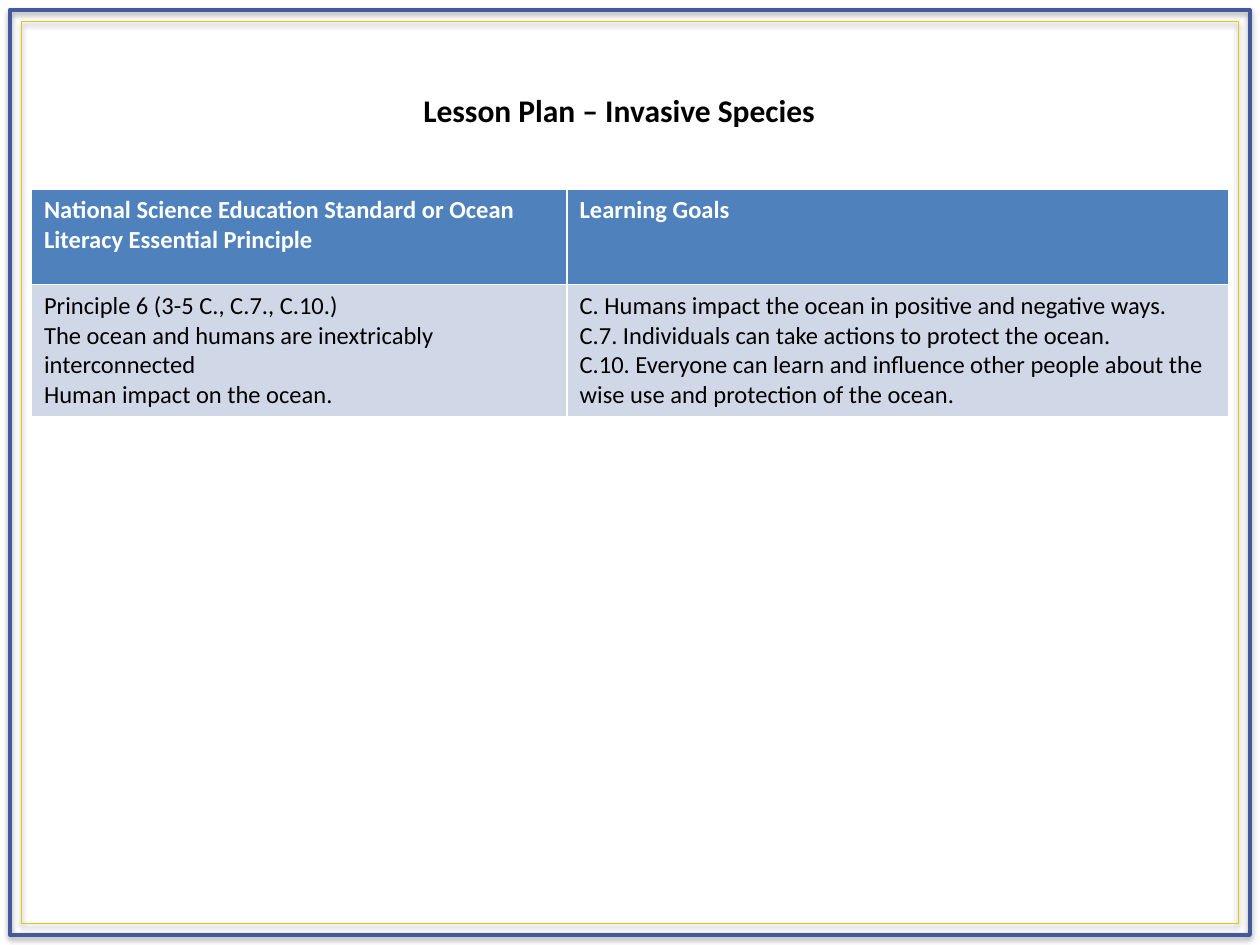
import pptx
import pptx.dml.color
import pptx.enum.shapes
import pptx.enum.text
import pptx.oxml
import pptx.oxml.ns
import pptx.util
from pptx.util import Inches


def color(hex_text):
    return pptx.dml.color.RGBColor.from_string(hex_text)


def set_font(para, size, hex_text, bold):
    para.font.name = "Calibri"
    para.font.size = pptx.util.Pt(size)
    para.font.bold = bold
    para.font.color.rgb = color(hex_text)


SHADOW = (
    f'<a:effectLst {pptx.oxml.ns.nsdecls("a")}>'
    '<a:outerShdw blurRad="40000" dist="23000" dir="5400000" rotWithShape="0">'
    '<a:srgbClr val="000000"><a:alpha val="35000"/></a:srgbClr>'
    '</a:outerShdw></a:effectLst>'
)

deck = pptx.Presentation()
deck.slide_width = Inches(10)
deck.slide_height = Inches(7.5)
page = deck.slides.add_slide(deck.slide_layouts[6])

# Standards table; the default table style supplies the white cell borders
rows = [
    (["National Science Education Standard or Ocean Literacy Essential Principle"],
     ["Learning Goals"]),
    (["Principle 6 (3-5 C., C.7., C.10.)",
      "The ocean and humans are inextricably interconnected",
      "Human impact on the ocean."],
     ["C. Humans impact the ocean in positive and negative ways.",
      "C.7. Individuals can take actions to protect the ocean.",
      "C.10. Everyone can learn and influence other people about the "
      "wise use and protection of the ocean."]),
]
row_styles = [("4F81BD", "FFFFFF", True), ("D0D8E8", "000000", False)]
table = page.shapes.add_table(
    2, 2, Inches(0.25), Inches(1.5), Inches(9.5), Inches(1.52)).table
for column, width in zip(table.columns, (4.25, 5.25)):
    column.width = Inches(width)
for row, texts, (fill, text_color, bold) in zip(table.rows, rows, row_styles):
    row.height = Inches(0.76)
    for cell, lines in zip(row.cells, texts):
        cell.fill.solid()
        cell.fill.fore_color.rgb = color(fill)
        cell.text_frame.text = "\n".join(lines)
        for para in cell.text_frame.paragraphs:
            set_font(para, 14, text_color, bold)

# Double page border: inner yellow, outer blue
for margin, line_color, line_width in [(0.17, "E5C50E", 1), (0.08, "43599B", 2.5)]:
    frame = page.shapes.add_shape(
        pptx.enum.shapes.MSO_SHAPE.RECTANGLE, Inches(margin), Inches(margin),
        Inches(10 - 2 * margin), Inches(7.5 - 2 * margin))
    frame.fill.background()
    frame.line.color.rgb = color(line_color)
    frame.line.width = pptx.util.Pt(line_width)
    frame.element.spPr.append(pptx.oxml.parse_xml(SHADOW))

title = page.shapes.add_textbox(Inches(1.83), Inches(0.67), Inches(6.17), Inches(0.4))
title.text_frame.word_wrap = True
title.text_frame.auto_size = pptx.enum.text.MSO_AUTO_SIZE.SHAPE_TO_FIT_TEXT
title.text_frame.text = "Lesson Plan – Invasive Species"
heading = title.text_frame.paragraphs[0]
heading.alignment = pptx.enum.text.PP_ALIGN.CENTER
set_font(heading, 18, "000000", True)

deck.save("out.pptx")
